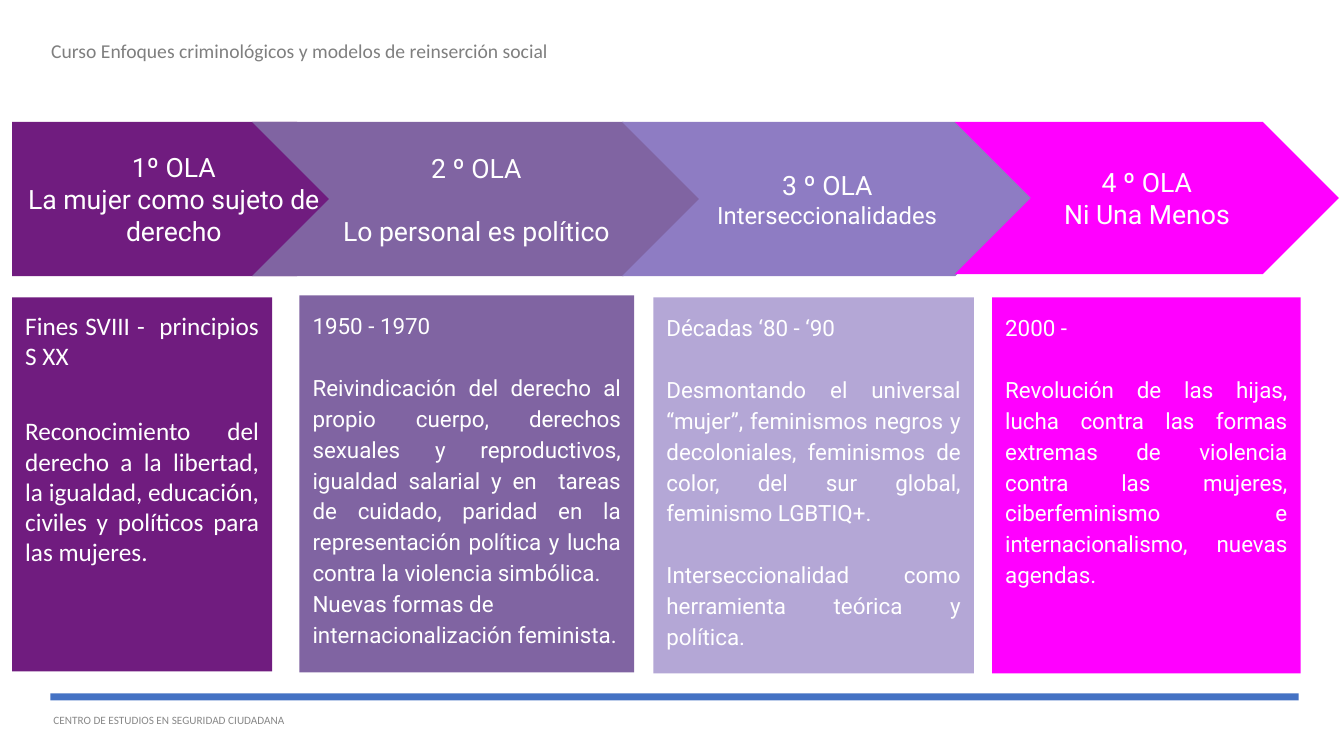
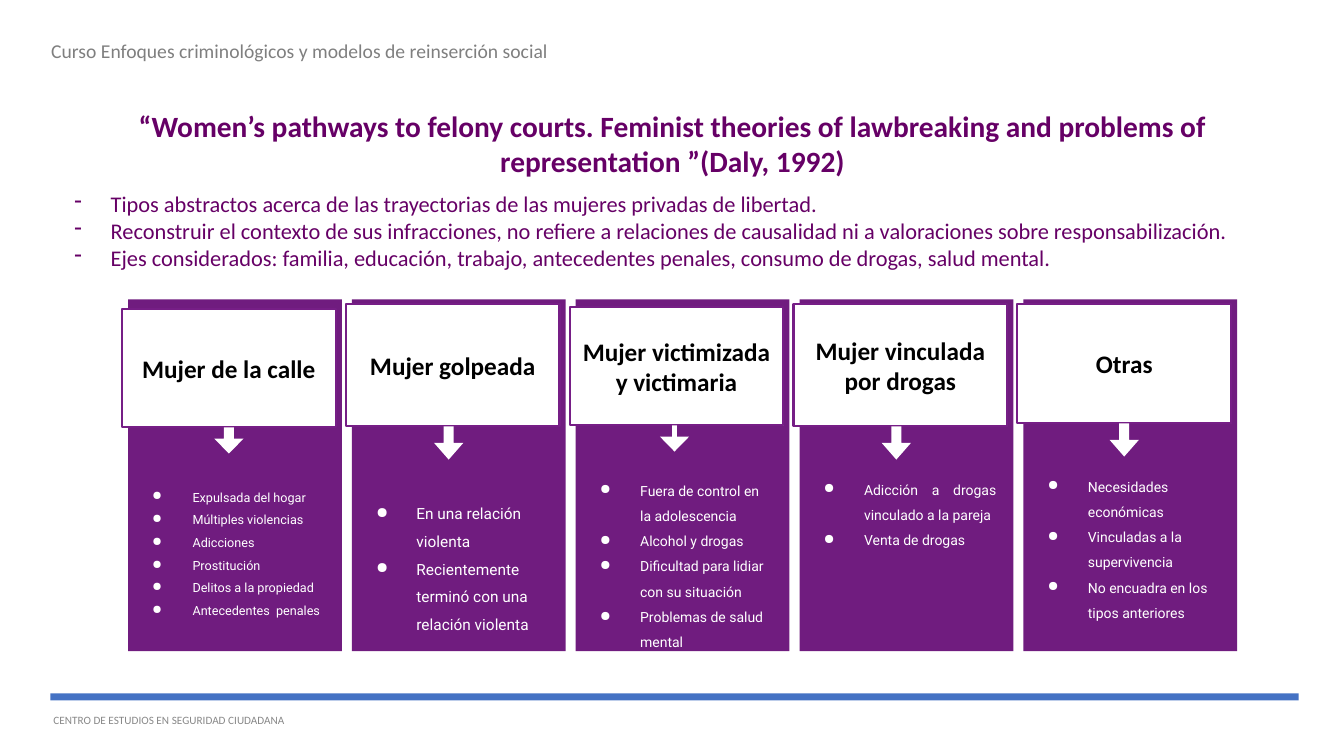
from dataclasses import dataclass

from lxml import etree
from pptx import Presentation
from pptx.dml.color import RGBColor
from pptx.enum.shapes import MSO_SHAPE
from pptx.enum.text import MSO_ANCHOR, PP_ALIGN
from pptx.oxml.ns import qn
from pptx.util import Inches, Pt

RECT, PENTAGON, CHEVRON = MSO_SHAPE.RECTANGLE, MSO_SHAPE.PENTAGON, MSO_SHAPE.CHEVRON
DOWN_ARROW = MSO_SHAPE.DOWN_ARROW
LEFT, CENTER, JUSTIFY = PP_ALIGN.LEFT, PP_ALIGN.CENTER, PP_ALIGN.JUSTIFY
TOP, MIDDLE = MSO_ANCHOR.TOP, MSO_ANCHOR.MIDDLE

WHITE = RGBColor(0xFF, 0xFF, 0xFF)
BLACK = RGBColor(0x00, 0x00, 0x00)
HEADER_GRAY = RGBColor(0x7F, 0x7F, 0x7F)
FOOTER_GRAY = RGBColor(0x88, 0x88, 0x88)
BAR_BLUE = RGBColor(0x44, 0x72, 0xC4)
PURPLE = RGBColor(0x70, 0x1C, 0x7F)
LABEL_BORDER = RGBColor(0x76, 0x1E, 0x86)
TITLE_PURPLE = RGBColor(0x66, 0x00, 0x66)
MAUVE = RGBColor(0x80, 0x64, 0xA2)
LAVENDER = RGBColor(0x8E, 0x7C, 0xC3)
PALE_LAVENDER = RGBColor(0xB4, 0xA7, 0xD6)
MAGENTA = RGBColor(0xFF, 0x00, 0xFF)

CALIBRI, ROBOTO = "Calibri", "Roboto"
TEXT_INSETS = (0.1, 0.05, 0.1, 0.05)
PADDED = (0.13, 0.13, 0.13, 0.13)
BLOCK_GAP = 22  # one line of body text, in points


@dataclass(frozen=True)
class Para:
    """A paragraph; unset fields follow the format of its text block."""
    text: str
    before: float = 0
    align: PP_ALIGN | None = None
    size: float | None = None
    bold: bool | None = None
    bullet: str = ""


@dataclass(frozen=True)
class Box:
    left: float
    top: float
    width: float
    height: float

    def lengths(self) -> tuple:
        return tuple(Inches(v) for v in (self.left, self.top, self.width, self.height))


@dataclass(frozen=True)
class Wave:
    arrow: Box
    arrow_shape: MSO_SHAPE
    arrow_color: RGBColor
    heading: tuple[Para, ...]
    panel: Box
    panel_color: RGBColor
    body: tuple[Para, ...]
    body_font: str = ROBOTO
    body_size: float = 16
    body_spacing: float = 1.15


@dataclass(frozen=True)
class Pathway:
    name: str
    label_top: float
    label_height: float
    arrow_center: float
    arrow_height: float
    list_top: float
    traits: tuple[str, ...]
    size: float = 10
    align: PP_ALIGN = LEFT
    shaft: float = 0.34


def set_bullet(paragraph, char: str, color: RGBColor, margin: float, hanging: float) -> None:
    props = paragraph._p.get_or_add_pPr()
    props.set("marL", str(Inches(margin)))
    props.set("indent", str(-Inches(hanging)))
    bullet_color = etree.SubElement(props, qn("a:buClr"))
    etree.SubElement(bullet_color, qn("a:srgbClr"), val=str(color))
    etree.SubElement(props, qn("a:buChar"), char=char)


def write_text(shape, paras: tuple[Para, ...], *, size: float, color: RGBColor,
               font: str = CALIBRI, bold: bool = False, align: PP_ALIGN = LEFT,
               anchor: MSO_ANCHOR = TOP, spacing: float = 1.0, insets: tuple = PADDED,
               margin: float = 0, hanging: float = 0) -> None:
    frame = shape.text_frame
    frame.word_wrap = True
    frame.vertical_anchor = anchor
    (frame.margin_left, frame.margin_top,
     frame.margin_right, frame.margin_bottom) = (Inches(v) for v in insets)
    for index, para in enumerate(paras):
        paragraph = frame.add_paragraph() if index else frame.paragraphs[0]
        paragraph.alignment = align if para.align is None else para.align
        paragraph.line_spacing = spacing
        paragraph.space_before = Pt(para.before)
        if para.bullet:
            set_bullet(paragraph, para.bullet, color, margin, hanging)
        run = paragraph.add_run()
        run.text = para.text
        run.font.name = font
        run.font.size = Pt(para.size or size)
        run.font.bold = bold if para.bold is None else para.bold
        run.font.color.rgb = color


def add_block(slide, kind: MSO_SHAPE, box: Box, fill: RGBColor,
              border: RGBColor | None = None, border_width: float = 1.5):
    block = slide.shapes.add_shape(kind, *box.lengths())
    block.shadow.inherit = False
    block.fill.solid()
    block.fill.fore_color.rgb = fill
    if border is None:
        block.line.fill.background()
    else:
        block.line.color.rgb = border
        block.line.width = Pt(border_width)
    return block


def add_text(slide, box: Box, paras: tuple[Para, ...], **text_format) -> None:
    write_text(slide.shapes.add_textbox(*box.lengths()), paras, **text_format)


def new_slide(deck):
    """Blank slide with the course header, bottom bar and footer."""
    slide = deck.slides.add_slide(deck.slide_layouts[6])
    add_block(slide, RECT, Box(0.5, 6.88, 12.38, 0.07), BAR_BLUE)
    add_text(slide, Box(0.53, 7.04, 3.33, 0.2),
             (Para("CENTRO DE ESTUDIOS EN SEGURIDAD CIUDADANA"),),
             size=8, color=FOOTER_GRAY, anchor=MIDDLE, insets=(0, 0, 0.1, 0))
    add_text(slide, Box(0.41, 0.36, 5.17, 0.67),
             (Para("Curso Enfoques criminológicos y modelos de reinserción social"),),
             size=14, color=HEADER_GRAY, spacing=0.9, insets=TEXT_INSETS)
    return slide


# Slide 1: the four waves
WAVES = (
    Wave(Box(0.12, 1.21, 3.59, 1.53), PENTAGON, PURPLE,
         (Para("1º OLA"), Para("La mujer como sujeto de derecho")),
         Box(0.12, 2.95, 2.58, 3.71), PURPLE,
         (Para("Fines SVIII -  principios S XX", before=4.5),
          Para("Reconocimiento del derecho a la libertad, la igualdad, educación, "
               "civiles y políticos para las mujeres.", before=32)),
         CALIBRI, 18, 1.0),
    Wave(Box(2.5, 1.21, 4.45, 1.53), CHEVRON, MAUVE,
         (Para("2 º OLA"), Para("Lo personal es político", before=BLOCK_GAP)),
         Box(2.97, 2.93, 3.32, 3.74), MAUVE,
         (Para("1950 - 1970"),
          Para("Reivindicación del derecho al propio cuerpo, derechos sexuales y "
               "reproductivos, igualdad salarial y en  tareas de cuidado, paridad en la "
               "representación política y lucha contra la violencia simbólica.",
               before=BLOCK_GAP),
          Para("Nuevas formas de internacionalización feminista.", align=LEFT))),
    Wave(Box(6.17, 1.21, 4.07, 1.53), CHEVRON, LAVENDER,
         (Para("3 º OLA"), Para("Interseccionalidades", size=17)),
         Box(6.48, 2.95, 3.18, 3.73), PALE_LAVENDER,
         (Para("Décadas ‘80 - ‘90"),
          Para("Desmontando el universal “mujer”, feminismos negros y decoloniales, "
               "feminismos de color, del sur global, feminismo LGBTIQ+.", before=BLOCK_GAP),
          Para("Interseccionalidad como herramienta teórica y política.",
               before=BLOCK_GAP))),
    Wave(Box(9.47, 1.21, 3.81, 1.51), CHEVRON, MAGENTA,
         (Para("4 º OLA"), Para("Ni Una Menos")),
         Box(9.84, 2.95, 3.06, 3.73), MAGENTA,
         (Para("2000 -"),
          Para("Revolución de las hijas, lucha contra las formas extremas de violencia "
               "contra las mujeres, ciberfeminismo e internacionalismo, nuevas agendas.",
               before=BLOCK_GAP))),
)


def draw_wave(slide, wave: Wave) -> None:
    arrow = add_block(slide, wave.arrow_shape, wave.arrow, wave.arrow_color)
    write_text(arrow, wave.heading, size=19, color=WHITE, font=ROBOTO,
               align=CENTER, anchor=MIDDLE)
    panel = add_block(slide, RECT, wave.panel, wave.panel_color)
    write_text(panel, wave.body, size=wave.body_size, color=WHITE, font=wave.body_font,
               align=JUSTIFY, spacing=wave.body_spacing)


# Slide 2: pathways to felony courts
INTRO = (
    Para("“Women’s pathways to felony courts. Feminist theories of lawbreaking and "
         "problems of representation ”(Daly, 1992)", align=CENTER, size=21, bold=True),
    Para("Tipos abstractos acerca de las trayectorias de las mujeres privadas de libertad.",
         before=8.5, bullet="-"),
    Para("Reconstruir el contexto de sus infracciones, no refiere a relaciones de "
         "causalidad ni a valoraciones sobre responsabilización.", bullet="-"),
    Para("Ejes considerados: familia, educación, trabajo, antecedentes penales, consumo "
         "de drogas, salud mental.", bullet="-"),
)

PATHWAYS = (
    Pathway("Mujer de la calle", 3.07, 1.17, 1.0, 0.26, 4.65,
            ("Expulsada del hogar", "Múltiples violencias", "Adicciones", "Prostitución",
             "Delitos a la propiedad", "Antecedentes  penales"), size=9),
    Pathway("Mujer golpeada", 3.02, 1.21, 0.96, 0.33, 4.78,
            ("En una relación violenta", "Recientemente terminó con una relación violenta"),
            size=11),
    Pathway("Mujer victimizada y victimaria", 3.05, 1.17, 0.98, 0.26, 4.57,
            ("Fuera de control en la adolescencia", "Alcohol y drogas",
             "Dificultad para lidiar con su situación", "Problemas de salud mental"),
            shaft=0.16),
    Pathway("Mujer vinculada por drogas", 3.02, 1.21, 0.96, 0.33, 4.56,
            ("Adicción a drogas vinculado a la pareja", "Venta de drogas"), align=JUSTIFY),
    Pathway("Otras", 3.02, 1.18, 1.0, 0.33, 4.53,
            ("Necesidades económicas", "Vinculadas a la supervivencia",
             "No encuadra en los tipos anteriores")),
)
CARD_LEFT, CARD_TOP, CARD_PITCH = 1.27, 2.97, 2.22
CARD_WIDTH, CARD_HEIGHT = 2.12, 3.49
ARROW_WIDTH = 0.29


def draw_pathway(slide, left: float, pathway: Pathway) -> None:
    add_block(slide, RECT, Box(left, CARD_TOP, CARD_WIDTH, CARD_HEIGHT), PURPLE)
    label_box = Box(left - 0.06, pathway.label_top, CARD_WIDTH, pathway.label_height)
    label = add_block(slide, RECT, label_box, WHITE, LABEL_BORDER)
    write_text(label, (Para(pathway.name),), size=18, color=BLACK, bold=True,
               align=CENTER, anchor=MIDDLE)
    # The arrow hangs from the bottom edge of the label
    arrow_box = Box(left + pathway.arrow_center - ARROW_WIDTH / 2,
                    pathway.label_top + pathway.label_height,
                    ARROW_WIDTH, pathway.arrow_height)
    arrow = add_block(slide, DOWN_ARROW, arrow_box, WHITE)
    arrow.adjustments[0] = pathway.shaft
    arrow.adjustments[1] = 0.57
    add_text(slide, Box(left - 0.16, pathway.list_top, 2.24, 1.82),
             tuple(Para(trait, bullet="●") for trait in pathway.traits),
             size=pathway.size, color=WHITE, font=ROBOTO, align=pathway.align,
             spacing=1.5, margin=0.67, hanging=0.4)


def main() -> None:
    deck = Presentation()
    deck.slide_width, deck.slide_height = Inches(13.33), Inches(7.5)

    waves_slide = new_slide(deck)
    for wave in WAVES:
        draw_wave(waves_slide, wave)

    pathways_slide = new_slide(deck)
    add_text(pathways_slide, Box(0.5, 1.02, 12.34, 1.8), INTRO, size=16,
             color=TITLE_PURPLE, align=JUSTIFY, insets=TEXT_INSETS,
             margin=0.5, hanging=0.36)
    for index, pathway in enumerate(PATHWAYS):
        draw_pathway(pathways_slide, CARD_LEFT + index * CARD_PITCH, pathway)

    deck.save("out.pptx")


if __name__ == "__main__":
    main()
